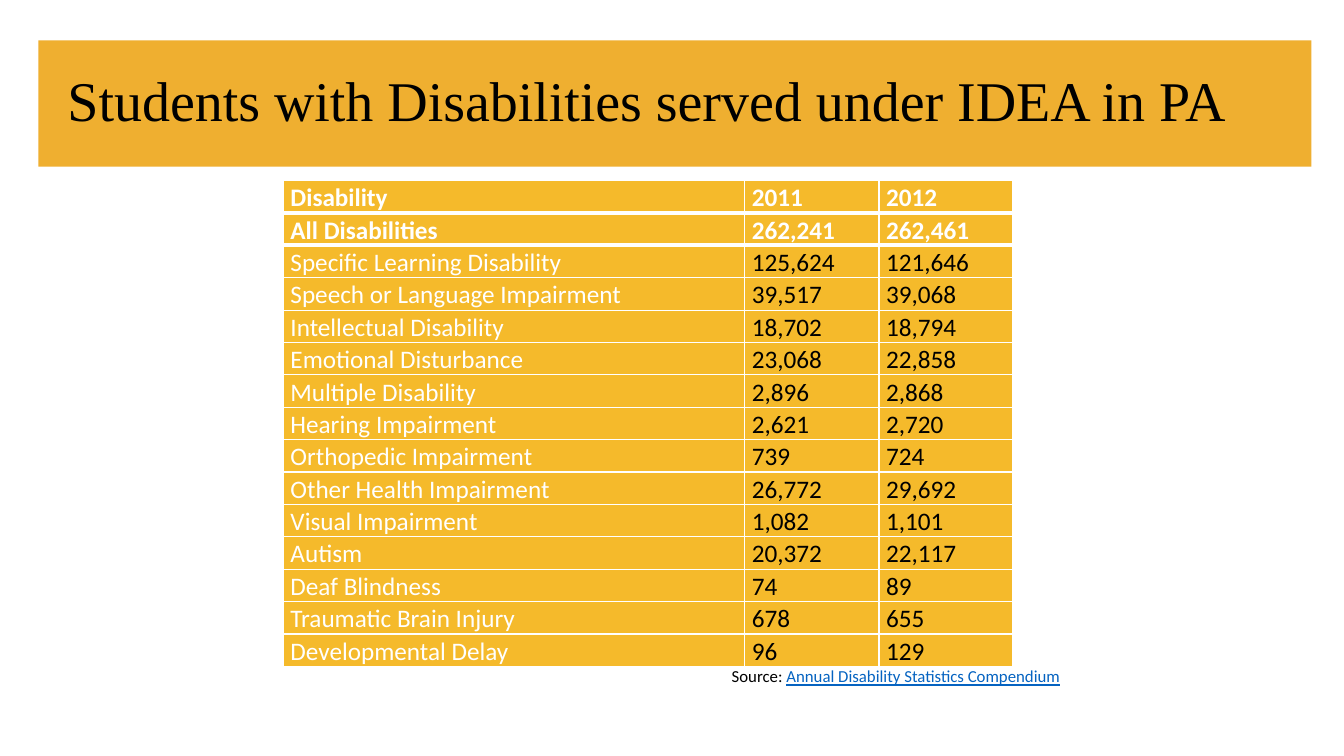
from lxml import etree
from pptx import Presentation
from pptx.dml.color import RGBColor
from pptx.enum.shapes import MSO_SHAPE
from pptx.enum.text import MSO_ANCHOR
from pptx.oxml.ns import qn
from pptx.util import Cm, Pt

RECT = MSO_SHAPE.RECTANGLE
MIDDLE = MSO_ANCHOR.MIDDLE

BLACK, WHITE, BLUE = "000000", "FFFFFF", "0563C1"
BAND, CELL = "EFAF30", "F5BA2B"

ROWS = [
    ("Disability", "2011", "2012"),
    ("All Disabilities", "262,241", "262,461"),
    ("Specific Learning Disability", "125,624", "121,646"),
    ("Speech or Language Impairment", "39,517", "39,068"),
    ("Intellectual Disability", "18,702", "18,794"),
    ("Emotional Disturbance", "23,068", "22,858"),
    ("Multiple Disability", "2,896", "2,868"),
    ("Hearing Impairment", "2,621", "2,720"),
    ("Orthopedic Impairment", "739", "724"),
    ("Other Health Impairment", "26,772", "29,692"),
    ("Visual Impairment", "1,082", "1,101"),
    ("Autism", "20,372", "22,117"),
    ("Deaf Blindness", "74", "89"),
    ("Traumatic Brain Injury", "678", "655"),
    ("Developmental Delay", "96", "129"),
]
HEADS = 2


def color(code):
    return RGBColor.from_string(code)


def style(font, name, size, code, bold=False):
    font.name = name
    font.size = Pt(size)
    font.color.rgb = color(code)
    font.bold = bold


def border(cell, widths):
    """Draw white cell edges; widths are points for left, right, top, bottom."""
    props = cell._tc.get_or_add_tcPr()
    for side, width in zip("LRTB", widths):
        line = etree.SubElement(props, qn(f"a:ln{side}"), w=str(Pt(width)))
        fill = etree.SubElement(line, qn("a:solidFill"))
        etree.SubElement(fill, qn("a:srgbClr"), val=WHITE)


class Page:
    serif = "Times New Roman"
    sans = "Calibri"

    def __init__(self, deck):
        self.shapes = deck.slides.add_slide(deck.slide_layouts[6]).shapes

    def band(self, *box):
        band = self.shapes.add_shape(RECT, *map(Cm, box))
        band.shadow.inherit = False
        band.fill.solid()
        band.fill.fore_color.rgb = color(BAND)
        band.line.fill.background()

    def frame(self, *box):
        frame = self.shapes.add_textbox(*map(Cm, box)).text_frame
        frame.word_wrap = True
        return frame

    def title(self, text, *box):
        frame = self.frame(*box)
        frame.vertical_anchor = MIDDLE
        frame.text = text
        para = frame.paragraphs[0]
        para.line_spacing = 0.9
        style(para.runs[0].font, self.serif, 40, BLACK)

    def source(self, label, link, *box):
        para = self.frame(*box).paragraphs[0]
        para.line_spacing = 0.8
        props = para._p.get_or_add_pPr()
        props.set("marL", str(Cm(0.97)))
        props.set("indent", str(-Cm(0.97)))
        for text, code in ((label, BLACK), (link, BLUE)):
            run = para.add_run()
            run.text = text
            style(run.font, self.sans, 12, code)
        run.font.underline = True

    def cell(self, cell, text, code, bold):
        cell.text = text
        cell.margin_left = cell.margin_right = Cm(0.18)
        cell.margin_top = cell.margin_bottom = 0
        para = cell.text_frame.paragraphs[0]
        para.line_spacing = 1.07
        style(para.runs[0].font, self.sans, 18, code, bold)

    def table(self, rows, left, top, widths, height):
        size = sum(widths), height * len(rows)
        grid = self.shapes.add_table(
            len(rows), len(widths), *map(Cm, (left, top, *size))).table
        for col, width in zip(grid.columns, widths):
            col.width = Cm(width)
        for i, row in enumerate(rows):
            grid.rows[i].height = Cm(height)
            head = i < HEADS
            above = 3 if 0 < i <= HEADS else 1
            below = 3 if head else 1
            for j, text in enumerate(row):
                cell = grid.cell(i, j)
                code = WHITE if head or j == 0 else BLACK
                self.cell(cell, text, code, head)
                border(cell, (1, 1, above, below))
                cell.fill.solid()
                cell.fill.fore_color.rgb = color(CELL)


def main():
    deck = Presentation()
    deck.slide_width, deck.slide_height = Cm(33.87), Cm(19.05)
    page = Page(deck)
    page.band(0.97, 1.02, 32.08, 3.18)
    page.title("Students with Disabilities served under IDEA in PA",
               1.45, 1.02, 31.06, 3.18)
    page.table(ROWS, 7.14, 4.55, (11.63, 3.38, 3.38), 0.81)
    page.source("Source: ", "Annual Disability Statistics Compendium",
                18.19, 16.76, 21.39, 1.27)
    deck.save("out.pptx")


if __name__ == "__main__":
    main()
